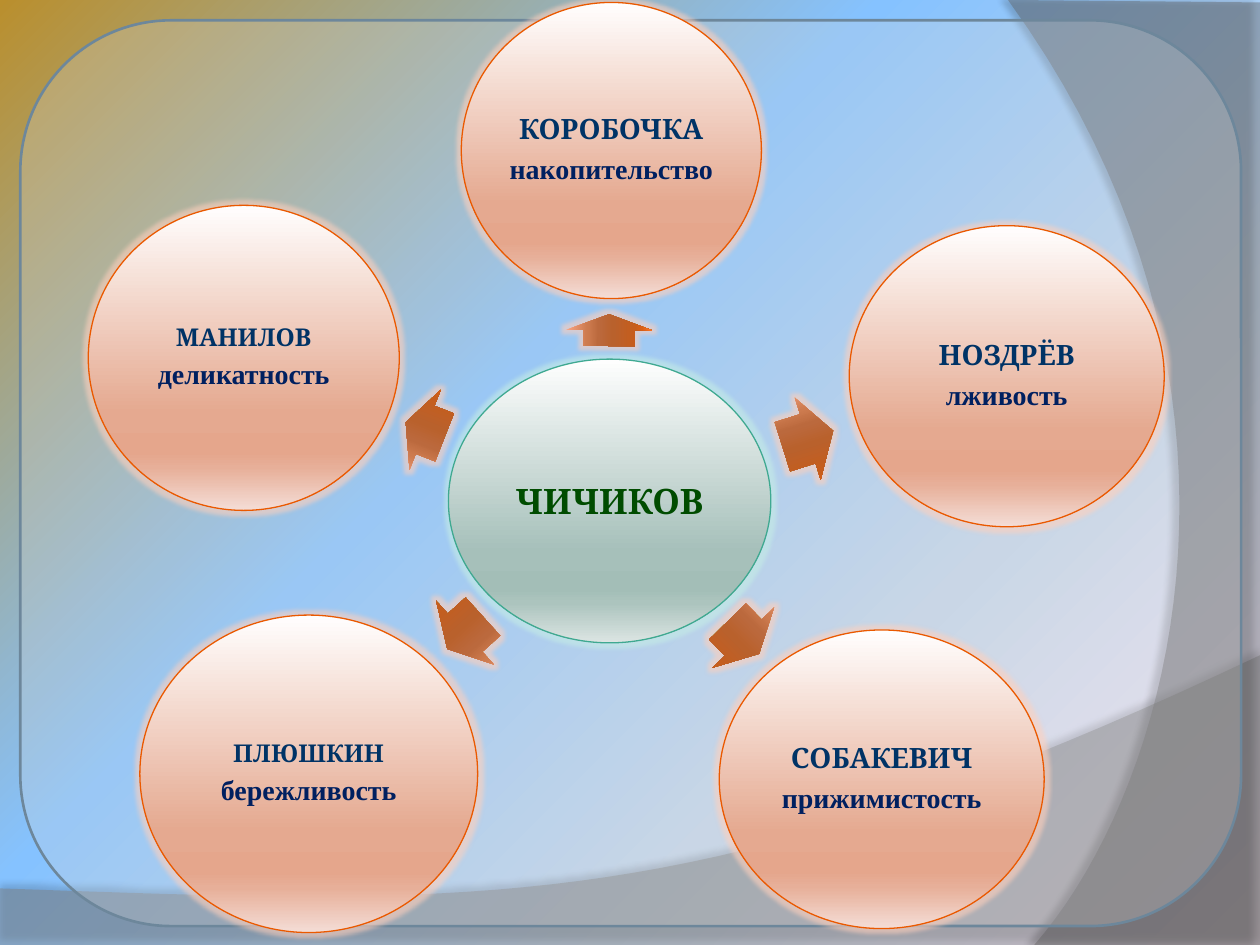
from dataclasses import dataclass

from lxml import etree
from pptx import Presentation
from pptx.dml.color import RGBColor
from pptx.enum.shapes import MSO_SHAPE
from pptx.enum.text import MSO_ANCHOR, PP_ALIGN
from pptx.oxml.ns import qn
from pptx.util import Cm, Pt

OVAL = MSO_SHAPE.OVAL
RIGHT_ARROW = MSO_SHAPE.RIGHT_ARROW
ROUNDED = MSO_SHAPE.ROUNDED_RECTANGLE
MIDDLE = MSO_ANCHOR.MIDDLE
CENTER = PP_ALIGN.CENTER


@dataclass(frozen=True)
class Theme:
    background: tuple = ((0, "BA8F2D"), (40, "85C2FF"), (70, "C4D6EB"), (100, "FFEBFA"))
    hero: tuple = ((0, "FEFEFE"), (68, "A6C0BA"), (81, "A3BEB7"), (86, "ACC4BE"), (100, "DCE5E3"))
    person: tuple = ((0, "FFFEFE"), (68, "E5A990"), (81, "E5A68C"), (86, "E7AF99"), (100, "F4DDD6"))
    arrow: tuple = ((0, "FAA685"), (25, "CD7B4F"), (38, "BB693D"), (55, "B9612C"),
                    (80, "C65D1D"), (88, "DA6015"), (100, "FF7928"))
    hero_line: str = "3FA991"
    person_line: str = "EA5900"
    hero_glow: str = "C5EDE5"
    person_glow: str = "FFD0BC"
    hero_text: str = "004C00"
    name_text: str = "003366"
    trait_text: str = "002060"
    wave: str = "7F7F7F"
    side: str = "5E5E5E"
    panel: str = "D9D9D9"
    panel_line: str = "6D879B"
    shadow: str = "000000"
    heading_font: str = "Cambria"
    body_font: str = "Times New Roman"
    hero_size: int = 20
    name_size: int = 16
    long_name_size: int = 14
    trait_size: int = 16


def add_color(parent, color, alpha):
    node = etree.SubElement(parent, qn("a:srgbClr"), val=color)
    etree.SubElement(node, qn("a:alpha"), val=str(alpha * 1000))


def curve(start, first, second, end, steps=40):
    """Points of a cubic curve after its start."""
    points = []
    for step in range(1, steps + 1):
        t = step / steps
        weights = ((1 - t) ** 3, 3 * t * (1 - t) ** 2, 3 * t * t * (1 - t), t ** 3)
        points.append(tuple(sum(w * p[axis] for w, p in zip(weights, (start, first, second, end)))
                            for axis in (0, 1)))
    return points


class Painter:
    def __init__(self, slide, theme):
        self.slide = slide
        self.theme = theme

    def gradient(self, fill, owner, stops, angle):
        fill.gradient()
        fill.gradient_angle = 360 - angle
        stop_list = next(owner.iter(qn("a:gsLst")))
        for stop in list(stop_list):
            stop_list.remove(stop)
        for position, color in stops:
            stop = etree.SubElement(stop_list, qn("a:gs"), pos=str(position * 1000))
            add_color(stop, color, 100)

    def background(self):
        self.gradient(self.slide.background.fill, self.slide.element, self.theme.background, 45)

    def solid(self, shape, color, alpha):
        shape.fill.solid()
        shape.fill.fore_color.rgb = RGBColor.from_string(color)
        node = next(shape.element.spPr.iter(qn("a:srgbClr")))
        etree.SubElement(node, qn("a:alpha"), val=str(alpha * 1000))

    def outline(self, shape, color, width):
        shape.line.color.rgb = RGBColor.from_string(color)
        shape.line.width = Pt(width)

    def effect(self, shape, kind, color, alpha, **settings):
        effects = shape.element.spPr.find(qn("a:effectLst"))
        node = etree.SubElement(effects, qn(kind), {key: str(value) for key, value in settings.items()})
        add_color(node, color, alpha)

    def preset(self, kind, left, top, width, height):
        shape = self.slide.shapes.add_shape(kind, Cm(left), Cm(top), Cm(width), Cm(height))
        shape.shadow.inherit = False
        return shape

    def backdrop(self, points, color, alpha, shadow_alpha, distance, direction):
        corners = [(Cm(x), Cm(y)) for x, y in points]
        builder = self.slide.shapes.build_freeform(*corners[0])
        builder.add_line_segments(corners[1:], close=True)
        shape = builder.convert_to_shape()
        shape.shadow.inherit = False
        self.solid(shape, color, alpha)
        shape.line.fill.background()
        self.effect(shape, "a:outerShdw", self.theme.shadow, shadow_alpha,
                    blurRad=Pt(4), dist=Pt(distance), dir=direction * 60000)

    def panel(self, left, top, width, height):
        shape = self.preset(ROUNDED, left, top, width, height)
        self.solid(shape, self.theme.panel, 25)
        self.outline(shape, self.theme.panel_line, 1.5)

    def circle(self, bounds, stops, line, glow, lines, spacing):
        shape = self.preset(OVAL, *bounds)
        self.gradient(shape.fill, shape.element.spPr, stops, 90)
        self.outline(shape, line, 0.75)
        self.effect(shape, "a:glow", glow, 60, rad=Pt(5))
        frame = shape.text_frame
        frame.word_wrap = True
        frame.vertical_anchor = MIDDLE
        frame.margin_left = frame.margin_right = Cm(0.05)
        frame.margin_top = frame.margin_bottom = Cm(0.05)
        for index, (text, font, size, color) in enumerate(lines):
            para = frame.add_paragraph() if index else frame.paragraphs[0]
            para.text = text
            para.alignment = CENTER
            para.line_spacing = spacing
            para.space_after = Pt(0.35 * size)
            para.font.name = font
            para.font.size = Pt(size)
            para.font.bold = True
            para.font.color.rgb = RGBColor.from_string(color)

    def hero(self, name, bounds):
        theme = self.theme
        lines = [(name, theme.heading_font, theme.hero_size, theme.hero_text)]
        self.circle(bounds, theme.hero, theme.hero_line, theme.hero_glow, lines, 1.0)

    def person(self, name, trait, bounds, name_size):
        theme = self.theme
        lines = [(name, theme.heading_font, name_size, theme.name_text),
                 (trait, theme.body_font, theme.trait_size, theme.trait_text)]
        self.circle(bounds, theme.person, theme.person_line, theme.person_glow, lines, 0.9)

    def arrow(self, left, top, width, rotation):
        shape = self.preset(RIGHT_ARROW, left, top, width, 1.73)
        shape.adjustments[0], shape.adjustments[1] = 0.6, 0.5
        shape.rotation = rotation
        self.gradient(shape.fill, shape.element.spPr, self.theme.arrow, 90)
        shape.line.fill.background()
        self.effect(shape, "a:glow", self.theme.person_glow, 60, rad=Pt(5))


def main():
    theme = Theme()
    deck = Presentation()
    deck.slide_width, deck.slide_height = Cm(25.4), Cm(19.05)
    page = deck.slides.add_slide(deck.slide_layouts[6])
    painter = Painter(page, theme)

    # Background with two translucent waves and a panel
    painter.background()
    wave = [(0, 17.91), (0, 19.05), (25.4, 19.05), (25.4, 13.21)]
    wave += curve(wave[-1], (14.2, 18.52), (9.93, 18.26), wave[0])
    painter.backdrop(wave, theme.wave, 45, 35, 3.5, 270)
    side = [(25.4, 0.05), (25.4, 19.05), (20.85, 19.05)]
    side += curve(side[-1], (23.75, 15.72), (25.86, 7.62), (20.32, 0))
    painter.backdrop(side, theme.side, 40, 45, 4, 180)
    painter.panel(0.41, 0.41, 24.61, 18.26)

    # Hero in the middle
    painter.hero("ЧИЧИКОВ", (9.04, 7.24, 6.5, 5.72))

    # Characters around him, each with an arrow: left, top, width, rotation
    characters = [
        ("КОРОБОЧКА", "накопительство", (9.3, 0.05, 6.05, 5.97), theme.name_size, (11.96, 5.79, 0.64, 270.3)),
        ("НОЗДРЁВ", "лживость", (17.12, 4.55, 6.35, 6.07), theme.name_size, (15.75, 7.98, 1.07, 342.5)),
        ("СОБАКЕВИЧ", "прижимистость", (14.5, 12.7, 6.55, 6.02), theme.name_size, (14.53, 11.99, 0.91, 45.6)),
        ("ПЛЮШКИН", "бережливость", (2.82, 12.4, 6.81, 6.4), theme.long_name_size, (8.89, 11.89, 0.97, 137.8)),
        ("МАНИЛОВ", "деликатность", (1.78, 4.14, 6.27, 6.15), theme.long_name_size, (8.15, 7.8, 0.84, 201.3)),
    ]
    for name, trait, bounds, name_size, arrow in characters:
        painter.arrow(*arrow)
        painter.person(name, trait, bounds, name_size)

    deck.save("out.pptx")


if __name__ == "__main__":
    main()
